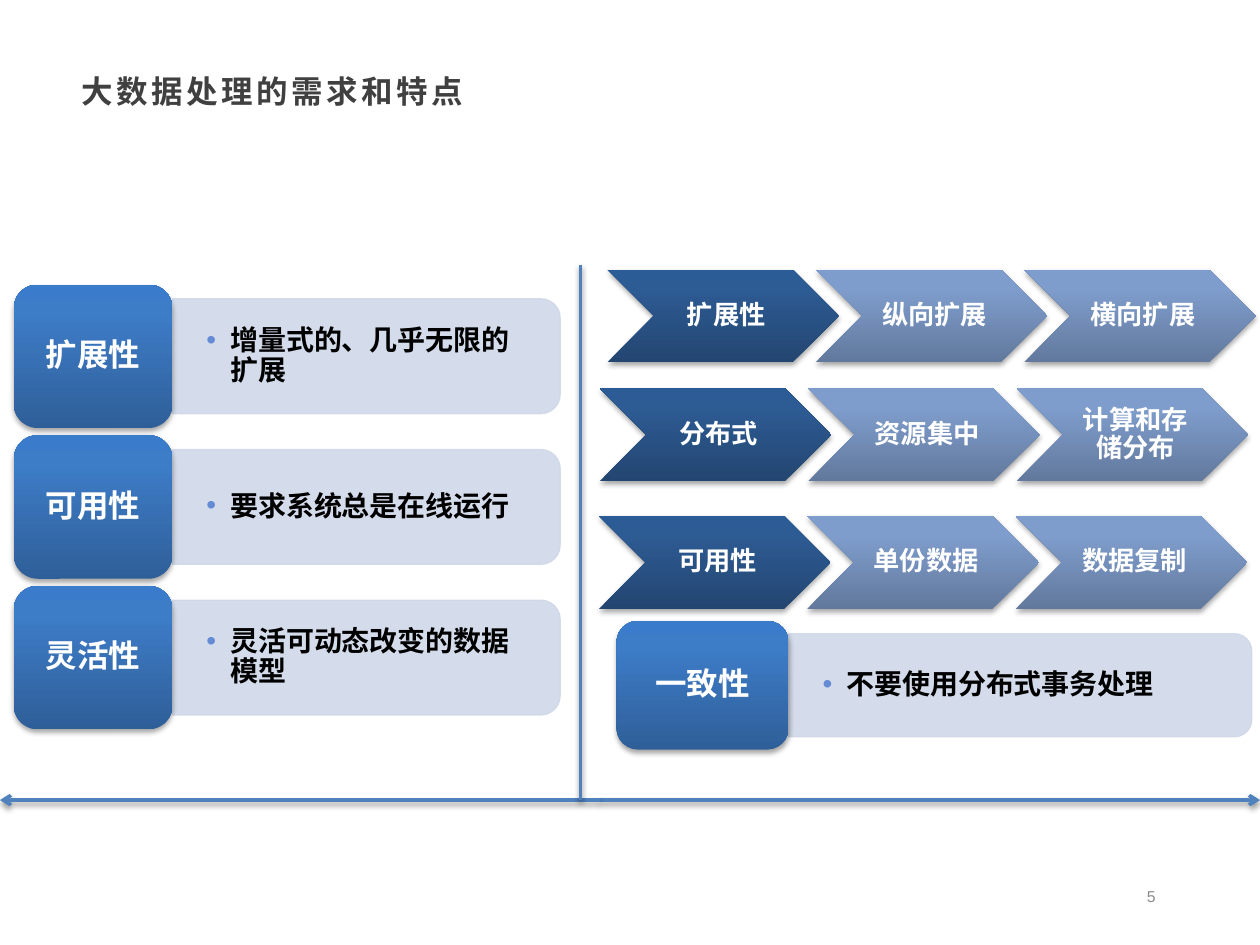
from lxml import etree
from pptx import Presentation
from pptx.dml.color import RGBColor
from pptx.enum import shapes, text
from pptx.oxml.ns import qn
from pptx.util import Pt

HUES = {
    "title": "404040", "page": "8C8C8C", "body": "000000", "white": "FFFFFF",
    "panel": "D0D8E8", "bullet": "658BD5", "line": "4F81BD", "shade": "000000",
}
# Gradient stops from bottom to top
FADES = {
    "tile": ("2F5F99", "3D7CC7", "3A7CCB"),
    "lead": ("234671", "2D5B93", "2B5C96"),
    "step": ("62799D", "7F9DCC", "7E9DCE"),
}
STOPS = (0, 80, 100)
CJK = "Noto Sans CJK SC"
KIND = shapes.MSO_SHAPE
ALIGN = text.PP_ALIGN


def node(parent, tag, **attrs):
    """Add a DrawingML child element."""
    kid = etree.SubElement(parent, qn("a:" + tag))
    for key, val in attrs.items():
        kid.set(key, str(val))
    return kid


def tint(parent, hue, alpha=100):
    color = node(parent, "srgbClr", val=hue)
    if alpha < 100:
        node(color, "alpha", val=alpha * 1000)


def shade(props, alpha, dist):
    """Cast a soft shadow straight down."""
    for old in props.findall(qn("a:effectLst")):
        props.remove(old)
    cast = node(node(props, "effectLst"), "outerShdw", blurRad=Pt(3.1),
                dist=Pt(dist), dir=5400000, rotWithShape=0)
    tint(cast, HUES["shade"], alpha)


def write(shape, words, size=16, hue="white", font=CJK, bold=True, align=ALIGN.CENTER,
          pad=(7.2, 3.6, 7.2, 3.6), lead=None, track=None, bullet=False):
    """Put one formatted paragraph into a shape."""
    frame = shape.text_frame
    frame.word_wrap = True
    frame.vertical_anchor = text.MSO_ANCHOR.MIDDLE
    (frame.margin_left, frame.margin_top,
     frame.margin_right, frame.margin_bottom) = map(Pt, pad)
    para = frame.paragraphs[0]
    para.alignment = align
    if lead:
        para.line_spacing = lead
    if bullet:
        props = para._p.get_or_add_pPr()
        props.set("marL", str(Pt(13.7)))
        props.set("indent", str(-Pt(13.7)))
        tint(node(props, "buClr"), HUES["bullet"])
        node(props, "buFont", typeface="Arial")
        node(props, "buChar", char="•")
    run = para.add_run()
    run.text = words
    run.font.size = Pt(size)
    run.font.bold = bold
    run.font.name = font
    run.font.color.rgb = RGBColor.from_string(HUES[hue])
    node(run._r.rPr, "ea", typeface=font)
    if track:
        run._r.rPr.set("spc", str(track * 100))


def label(slide, box, words, **form):
    write(slide.shapes.add_textbox(*map(Pt, box)), words, **form)


def block(slide, kind, box, fade):
    """Add a shaded shape with a vertical gradient."""
    shape = slide.shapes.add_shape(kind, *map(Pt, box))
    shape.shadow.inherit = False
    shape.line.fill.background()
    shape.fill.gradient()
    shape.fill.gradient_angle = 90
    stops = shape._element.spPr.find(".//" + qn("a:gsLst"))
    for old in list(stops):
        stops.remove(old)
    for pos, hue in zip(STOPS, FADES[fade]):
        tint(node(stops, "gs", pos=pos * 1000), hue)
    shade(shape._element.spPr, 35, 1.8)
    return shape


def panel(slide, box):
    """Add a pale panel with round corners on the right only."""
    x, y, w, h = box
    shape = slide.shapes.add_shape(
        KIND.ROUND_2_SAME_RECTANGLE,
        Pt(x + (w - h) / 2), Pt(y + (h - w) / 2), Pt(h), Pt(w))
    shape.rotation = 90
    shape.shadow.inherit = False
    for paint in (shape.fill, shape.line.fill):
        paint.solid()
        paint.fore_color.rgb = RGBColor.from_string(HUES["panel"])
    shape.line.width = Pt(0.75)
    for color in shape._element.spPr.iter(qn("a:srgbClr")):
        node(color, "alpha", val=90000)


def trait(slide, box, tile, name, note):
    """A named tile followed by its panel; tile is the tile's width."""
    x, y, w, h = box
    px, py, pw, ph = x + tile, y + h * 0.1, w - tile, h * 0.8
    panel(slide, (px, py, pw, ph))
    label(slide, (px, py + 3, pw - 3, ph - 6), note, hue="body", align=ALIGN.LEFT,
          pad=(19.4, 10, 19.4, 10), lead=0.9, bullet=True)
    shape = block(slide, KIND.ROUNDED_RECTANGLE, (x, y, tile, h), "tile")
    write(shape, name, size=18, pad=(5, 3, 5, 3), lead=0.9)


def traits(slide, box, rows):
    """Stacked traits with gaps of a twentieth of a row."""
    x, y, w, h = box
    high = h / (1.05 * len(rows) - 0.05)
    for i, (name, note) in enumerate(rows):
        trait(slide, (x, y + i * 1.05 * high, w, high), 90.7, name, note)


def chain(slide, box, steps):
    """A row of chevrons, each overlapping the next by a tenth."""
    x, y, w, h = box
    wide = w / (0.9 * len(steps) + 0.1)
    for i, words in enumerate(steps):
        shape = block(slide, KIND.CHEVRON, (x + i * 0.9 * wide, y, wide, h),
                      "step" if i else "lead")
        write(shape, words, size=15, pad=(5, 1.5, 1.5, 1.5), lead=0.9)


def rule(slide, start, end, arrow=False):
    line = slide.shapes.add_connector(
        shapes.MSO_CONNECTOR.STRAIGHT, *map(Pt, start + end))
    line.line.width = Pt(2)
    line.line.color.rgb = RGBColor.from_string(HUES["line"])
    if arrow:
        node(line.line._get_or_add_ln(), "tailEnd", type="arrow")
    shade(line._element.spPr, 38, 1.6)


def axes(slide, box):
    """Base line with arrows at both ends and a divider above it."""
    x, y, w, h = box
    base = y + h
    for end in (x + w, x):
        rule(slide, (x + 342.7, base), (end, base), arrow=True)
    rule(slide, (x + 331.6, y), (x + 331.6, base))


def main():
    deck = Presentation()
    deck.slide_width, deck.slide_height = Pt(720), Pt(540)
    slide = deck.slides.add_slide(deck.slide_layouts[6])

    # Page number
    label(slide, (508.3, 499.7, 159.1, 25.2), "5", size=9, hue="page",
          font="Arial", bold=False, align=ALIGN.RIGHT)

    # Left: needs
    traits(slide, (7.9, 162.6, 312.2, 254.2), (
        ("扩展性", "增量式的、几乎无限的扩展"),
        ("可用性", "要求系统总是在线运行"),
        ("灵活性", "灵活可动态改变的数据模型"),
    ))

    # Right: features
    for x, y, steps in (
        (347.1, 154.1, ("扩展性", "纵向扩展", "横向扩展")),
        (342.8, 222, ("分布式", "资源集中", "计算和存储分布")),
        (342.3, 295, ("可用性", "单份数据", "数据复制")),
    ):
        chain(slide, (x, y, 370.4, 52.9), steps)
    trait(slide, (352.3, 354.8, 363, 73.6), 98.4, "一致性", "不要使用分布式事务处理")

    # Lines and title
    axes(slide, (0, 151.2, 720, 306))
    label(slide, (39.6, 34.6, 640.8, 34.6), "大数据处理的需求和特点", size=18,
          hue="title", align=ALIGN.LEFT, track=2)
    deck.save("out.pptx")


if __name__ == "__main__":
    main()
